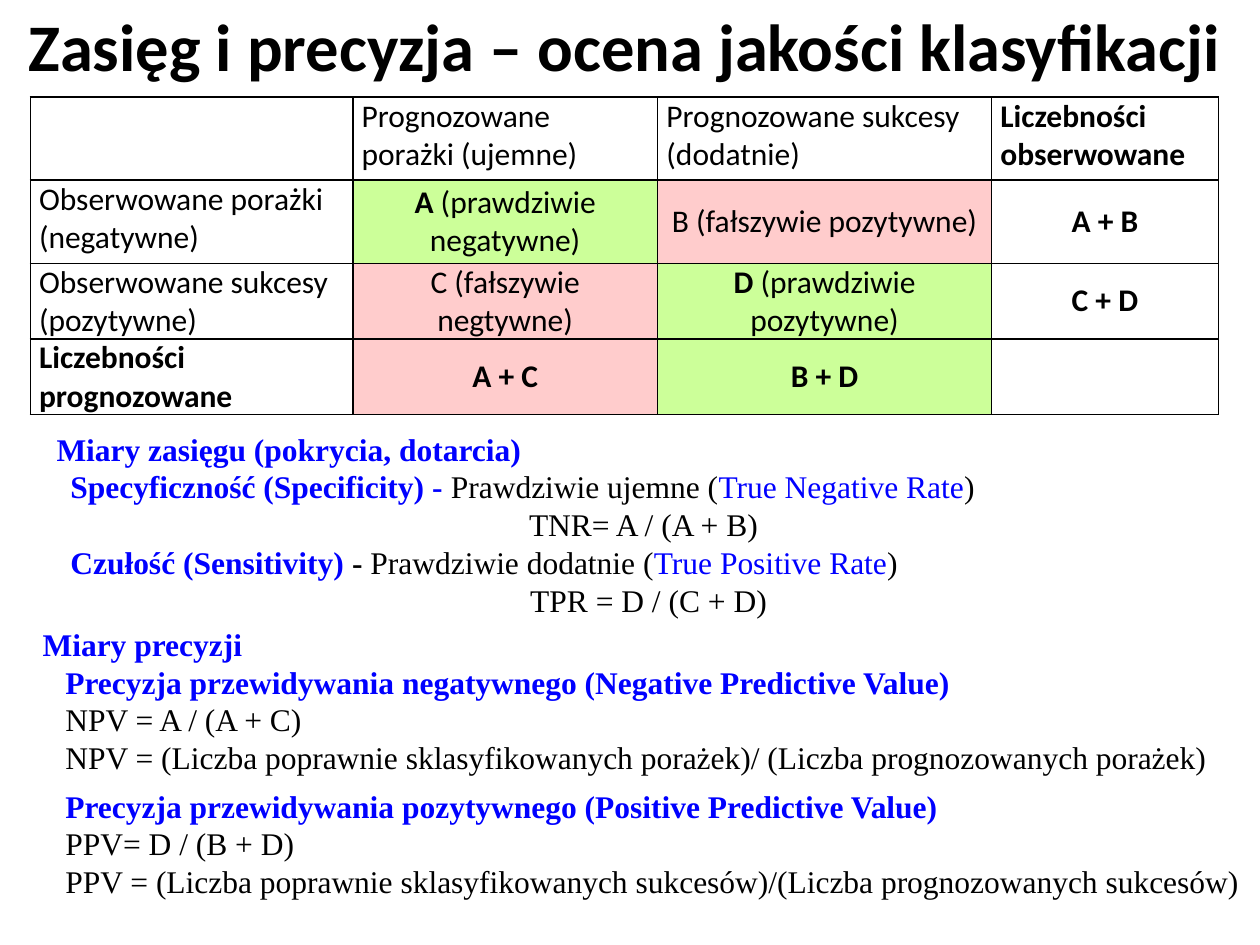
from lxml.etree import SubElement
from pptx import Presentation
from pptx.dml.color import RGBColor
from pptx.enum.text import MSO_ANCHOR, MSO_AUTO_SIZE, PP_ALIGN
from pptx.oxml.ns import qn
from pptx.util import Inches, Pt

BLACK = RGBColor(0x00, 0x00, 0x00)
BLUE = RGBColor(0x00, 0x00, 0xFF)
GREEN = RGBColor(0xCC, 0xFF, 0x99)
PINK = RGBColor(0xFF, 0xCC, 0xCC)

PLAIN = {}
BOLD = {"bold": True}
TERM = {"color": BLUE}
HEADING = {"color": BLUE, "bold": True}

TOP_LEVEL = {}
MEASURE = {"level": 1, "margin": 0.1, "indent": 0.01}
PRECISION = {"level": 1, "margin": 0.49, "indent": -0.31}
PRECISION_END = {**PRECISION, "space_after": 6}

COVERAGE = [
    ([("Miary zasięgu (pokrycia, dotarcia)", HEADING)], TOP_LEVEL),
    ([("Specyficzność (Specificity) - ", HEADING), ("Prawdziwie ujemne (", PLAIN),
      ("True Negative Rate", TERM), (")", PLAIN)], MEASURE),
    ([("TNR= A / (A + B)", PLAIN)], {"level": 1, "margin": 4.06, "indent": -0.31}),
    ([("Czułość (Sensitivity)", HEADING), (" - ", BOLD), ("Prawdziwie dodatnie (", PLAIN),
      ("True Positive Rate", TERM), (")", PLAIN)], MEASURE),
    ([("TPR = D / (C + D)", PLAIN)], {"level": 1, "margin": 3.76}),
]

PREDICTION = [
    ([("Miary precyzji", HEADING)], TOP_LEVEL),
    ([("Precyzja przewidywania negatywnego (Negative Predictive Value)", HEADING)], PRECISION),
    ([("NPV = A / (A + C)", PLAIN)], PRECISION),
    ([("NPV = (Liczba poprawnie sklasyfikowanych porażek)/ "
       "(Liczba prognozowanych porażek)", PLAIN)], PRECISION_END),
    ([("Precyzja przewidywania pozytywnego (Positive Predictive Value)", HEADING)], PRECISION),
    ([("PPV= D / (B + D)", PLAIN)], PRECISION),
    ([("PPV = (Liczba poprawnie sklasyfikowanych sukcesów)/"
       "(Liczba prognozowanych sukcesów)", PLAIN)], PRECISION_END),
]

CONFUSION = [
    [[], [("Prognozowane porażki (ujemne)", PLAIN)],
     [("Prognozowane sukcesy (dodatnie)", PLAIN)], [("Liczebności\nobserwowane", BOLD)]],
    [[("Obserwowane porażki (negatywne)", PLAIN)],
     [("A", BOLD), (" (prawdziwie negatywne)", PLAIN)],
     [("B (fałszywie pozytywne)", PLAIN)], [("A + B", BOLD)]],
    [[("Obserwowane sukcesy (pozytywne)", PLAIN)], [("C (fałszywie negtywne)", PLAIN)],
     [("D", BOLD), (" (prawdziwie pozytywne)", PLAIN)], [("C + D", BOLD)]],
    [[("Liczebności prognozowane", BOLD)], [("A + C", BOLD)], [("B + D", BOLD)], []],
]
CELL_FILLS = {(1, 1): GREEN, (1, 2): PINK, (2, 1): PINK,
              (2, 2): GREEN, (3, 1): PINK, (3, 2): GREEN}


def add_text(paragraph, text, font="Calibri", size=18, color=BLACK, bold=False):
    """Append formatted text to a paragraph, breaking lines at newlines."""
    for number, line in enumerate(text.split("\n")):
        if number:
            paragraph.add_line_break()
        run = paragraph.add_run()
        run.text = line
        run.font.name = font
        run.font.size = Pt(size)
        run.font.color.rgb = color
        run.font.bold = bold


class SlideBuilder:
    """Hold the text style and the current slide, and add elements to it."""

    def __init__(self, slide, body_font):
        self.slide = slide
        self.body_font = body_font

    def title(self, text, left, top, width, height):
        shape = self.slide.shapes.title
        shape.left, shape.top = Inches(left), Inches(top)
        shape.width, shape.height = Inches(width), Inches(height)
        frame = shape.text_frame
        frame.word_wrap = True
        frame.auto_size = MSO_AUTO_SIZE.NONE
        frame.vertical_anchor = MSO_ANCHOR.MIDDLE
        paragraph = frame.paragraphs[0]
        paragraph.alignment = PP_ALIGN.CENTER
        paragraph.line_spacing = Pt(39)
        add_text(paragraph, text, size=38, bold=True)

    def text_box(self, content, left, top, width, height):
        shape = self.slide.shapes.add_textbox(
            Inches(left), Inches(top), Inches(width), Inches(height))
        frame = shape.text_frame
        frame.word_wrap = True
        frame.auto_size = MSO_AUTO_SIZE.SHAPE_TO_FIT_TEXT
        for number, (runs, layout) in enumerate(content):
            paragraph = frame.add_paragraph() if number else frame.paragraphs[0]
            paragraph.level = layout.get("level", 0)
            paragraph.space_after = Pt(layout.get("space_after", 0))
            properties = paragraph._p.get_or_add_pPr()
            properties.set("marL", str(Inches(layout.get("margin", 0))))
            properties.set("indent", str(Inches(layout.get("indent", 0))))
            for text, style in runs:
                add_text(paragraph, text, font=self.body_font, **style)

    def table(self, rows, fills, left, top, widths, heights):
        table = self.slide.shapes.add_table(
            len(heights), len(widths), Inches(left), Inches(top),
            Inches(sum(widths)), Inches(sum(heights))).table
        table.first_row = table.horz_banding = False
        for column, width in zip(table.columns, widths):
            column.width = Inches(width)
        for row, height in zip(table.rows, heights):
            row.height = Inches(height)
        for row_number, row in enumerate(rows):
            for column_number, runs in enumerate(row):
                self.cell(table.cell(row_number, column_number), runs,
                          fills.get((row_number, column_number)),
                          centered=row_number > 0 and column_number > 0)

    def cell(self, cell, runs, fill, centered):
        cell.margin_left = cell.margin_right = Inches(0.07)
        cell.margin_top = cell.margin_bottom = 0
        properties = cell._tc.get_or_add_tcPr()
        for edge in ("a:lnL", "a:lnR", "a:lnT", "a:lnB"):
            line = SubElement(properties, qn(edge), w=str(Pt(1)))
            solid = SubElement(line, qn("a:solidFill"))
            SubElement(solid, qn("a:srgbClr"), val=str(BLACK))
        if fill is None:
            cell.fill.background()
        else:
            cell.fill.solid()
            cell.fill.fore_color.rgb = fill
        paragraph = cell.text_frame.paragraphs[0]
        if centered:
            cell.vertical_anchor = MSO_ANCHOR.MIDDLE
            paragraph.alignment = PP_ALIGN.CENTER
        for text, style in runs:
            add_text(paragraph, text, **style)


def main():
    presentation = Presentation()
    presentation.slide_width = Inches(10)
    presentation.slide_height = Inches(7.5)
    slide = presentation.slides.add_slide(presentation.slide_layouts[5])
    builder = SlideBuilder(slide, body_font="Times New Roman")
    builder.title("Zasięg i precyzja – ocena jakości klasyfikacji", -0.02, -0.03, 9.96, 0.87)
    builder.text_box(COVERAGE, 0.35, 3.36, 9.29, 1.65)
    builder.text_box(PREDICTION, 0.24, 4.91, 9.7, 2.31)
    builder.table(CONFUSION, CELL_FILLS, 0.24, 0.77,
                  widths=[2.56, 2.42, 2.65, 1.8], heights=[0.66, 0.66, 0.58, 0.58])
    presentation.save("out.pptx")


if __name__ == "__main__":
    main()
